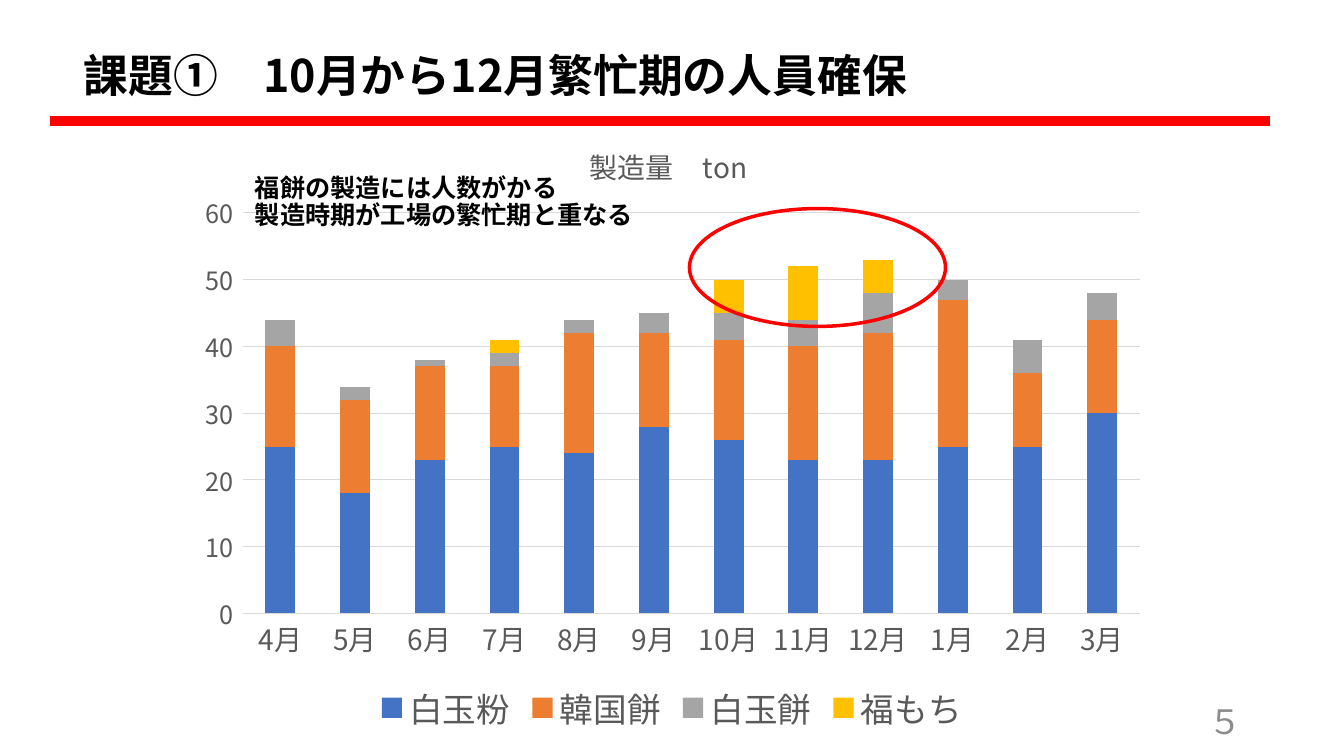
from dataclasses import dataclass

import pptx
import pptx.chart.data
import pptx.dml.color
import pptx.enum.chart
import pptx.enum.shapes
import pptx.enum.text
import pptx.oxml
import pptx.oxml.ns
import pptx.util
from pptx.util import Pt

qn = pptx.oxml.ns.qn


@dataclass(frozen=True)
class Theme:
    font: str = "Noto Sans CJK JP"
    ink: str = "000000"
    label: str = "595959"
    number: str = "8C8C8C"
    grid: str = "D9D9D9"
    accent: str = "FF0000"
    series: tuple = ("4472C4", "ED7D31", "A5A5A5", "FFC000")
    title_size: int = 32
    legend_size: int = 24
    number_size: int = 24
    axis_size: int = 20
    note_size: int = 18


THEME = Theme()
MONTHS = [f"{month}月" for month in (4, 5, 6, 7, 8, 9, 10, 11, 12, 1, 2, 3)]
PRODUCTION = {
    "白玉粉": (25, 18, 23, 25, 24, 28, 26, 23, 23, 25, 25, 30),
    "韓国餅": (15, 14, 14, 12, 18, 14, 15, 17, 19, 22, 11, 14),
    "白玉餅": (4, 2, 1, 2, 2, 3, 4, 4, 6, 3, 5, 4),
    "福もち": (0, 0, 0, 2, 0, 0, 5, 8, 5, 0, 0, 0),
}


def rgb(value):
    return pptx.dml.color.RGBColor.from_string(value)


def style_font(font, size, color, bold=False):
    """Set the same typeface for Latin and East Asian text."""
    font.size = Pt(size)
    font.bold = bold
    font.color.rgb = rgb(color)
    font.name = THEME.font
    east_asian = pptx.oxml.parse_xml(
        f'<a:ea {pptx.oxml.ns.nsdecls("a")} typeface="{THEME.font}"/>')
    font._rPr.find(qn("a:latin")).addnext(east_asian)


def fill_text(frame, text, size, color, bold=False, align="LEFT", anchor="TOP", spacing=0.9):
    frame.text = text
    frame.word_wrap = True
    frame.auto_size = pptx.enum.text.MSO_AUTO_SIZE.NONE
    frame.vertical_anchor = getattr(pptx.enum.text.MSO_ANCHOR, anchor)
    for paragraph in frame.paragraphs:
        paragraph.alignment = getattr(pptx.enum.text.PP_ALIGN, align)
        paragraph.line_spacing = spacing
        paragraph.space_before = Pt(0)
        for run in paragraph.runs:
            style_font(run.font, size, color, bold)


def set_layout(element, index, target=None, **fractions):
    """Place a chart part by fractions of the chart's size."""
    for old in element.findall(qn("c:layout")):
        element.remove(old)
    inner = f'<c:layoutTarget val="{target}"/>' if target else ""
    inner += "".join(f'<c:{key}Mode val="edge"/>' for key in "xy")
    inner += "".join(f'<c:{key} val="{value}"/>' for key, value in fractions.items())
    element.insert(index, pptx.oxml.parse_xml(
        f'<c:layout {pptx.oxml.ns.nsdecls("c")}>'
        f'<c:manualLayout>{inner}</c:manualLayout></c:layout>'))


def add_heading(slide, left, top, width, height):
    """Title with the red rule below it."""
    title = slide.shapes.title
    title.left, title.top = Pt(left + 16.6), Pt(top)
    title.width, title.height = Pt(634), Pt(height)
    fill_text(title.text_frame, "課題①　10月から12月繁忙期の人員確保",
              THEME.title_size, THEME.ink, bold=True)
    rule_y = Pt(top + height + 0.8)
    rule = slide.shapes.add_connector(
        pptx.enum.shapes.MSO_CONNECTOR.STRAIGHT, Pt(left), rule_y, Pt(left + width), rule_y)
    rule.line.color.rgb = rgb(THEME.accent)
    rule.line.width = Pt(6.75)
    rule._element.spPr.append(pptx.oxml.parse_xml(
        f'<a:effectLst {pptx.oxml.ns.nsdecls("a")}/>'))


def add_production_chart(slide, left, top, width, height):
    data = pptx.chart.data.CategoryChartData(number_format="0")
    data.categories = MONTHS
    for product, tons in PRODUCTION.items():
        data.add_series(product, tons)
    chart = slide.shapes.add_chart(
        pptx.enum.chart.XL_CHART_TYPE.COLUMN_STACKED,
        Pt(left), Pt(top), Pt(width), Pt(height), data).chart

    heading = chart.chart_title
    heading.text_frame.text = "製造量　ton"
    style_font(heading.text_frame.paragraphs[0].runs[0].font, THEME.axis_size, THEME.label)
    heading.include_in_layout = False
    set_layout(heading._element, 1, x=0.41, y=0.04)

    plot = chart.plots[0]
    plot.gap_width, plot.overlap, plot.vary_by_categories = 150, 100, False
    for series, color in zip(plot.series, THEME.series):
        series.format.fill.solid()
        series.format.fill.fore_color.rgb = rgb(color)
    set_layout(chart._chartSpace.chart.plotArea, 0, "inner", x=0.06, y=0.16, w=0.92, h=0.64)

    months, tons = chart.category_axis, chart.value_axis
    for axis, size in ((months, THEME.axis_size), (tons, THEME.note_size)):
        axis.major_tick_mark = axis.minor_tick_mark = pptx.enum.chart.XL_TICK_MARK.NONE
        style_font(axis.tick_labels.font, size, THEME.label)
    tons.minimum_scale, tons.maximum_scale, tons.major_unit = 0, 60, 10
    tons.tick_labels.number_format = r"#,##0_);[Red]\(#,##0\)"
    tons.tick_labels.number_format_is_linked = False
    tons.format.line.fill.background()
    for line in (months.format.line, tons.major_gridlines.format.line):
        line.color.rgb = rgb(THEME.grid)
        line.width = Pt(0.75)

    chart.has_legend = True
    chart.legend.position = pptx.enum.chart.XL_LEGEND_POSITION.BOTTOM
    chart.legend.include_in_layout = False
    style_font(chart.legend.font, THEME.legend_size, THEME.label)


def add_peak_ring(slide, left, top, width, height):
    ring = slide.shapes.add_shape(
        pptx.enum.shapes.MSO_SHAPE.OVAL, Pt(left), Pt(top), Pt(width), Pt(height))
    ring.shadow.inherit = False
    ring.fill.background()
    ring.line.color.rgb = rgb(THEME.accent)
    ring.line.width = Pt(2.5)


def add_note(slide, left, top, width, height):
    note = slide.shapes.add_textbox(Pt(left), Pt(top), Pt(width), Pt(height))
    fill_text(note.text_frame, "福餅の製造には人数がかる\n製造時期が工場の繁忙期と重なる",
              THEME.note_size, THEME.ink, bold=True)


def add_page_number(slide, left, top, width, height):
    number = slide.shapes.add_textbox(Pt(left), Pt(top), Pt(width), Pt(height))
    fill_text(number.text_frame, "５", THEME.number_size, THEME.number,
              align="RIGHT", anchor="MIDDLE", spacing=1.0)


def main():
    deck = pptx.Presentation()
    deck.slide_width, deck.slide_height = Pt(960), Pt(540)
    slide = deck.slides.add_slide(deck.slide_layouts.get_by_name("Title Only"))
    add_production_chart(slide, 131.8, 80.6, 696.2, 447.1)
    add_heading(slide, 36, 34.6, 871.2, 51)
    add_peak_ring(slide, 492.5, 149, 182.9, 84.2)
    add_note(slide, 175, 121.7, 327.6, 67)
    add_page_number(slide, 678.2, 500.4, 216, 28.8)
    deck.save("out.pptx")


if __name__ == "__main__":
    main()
